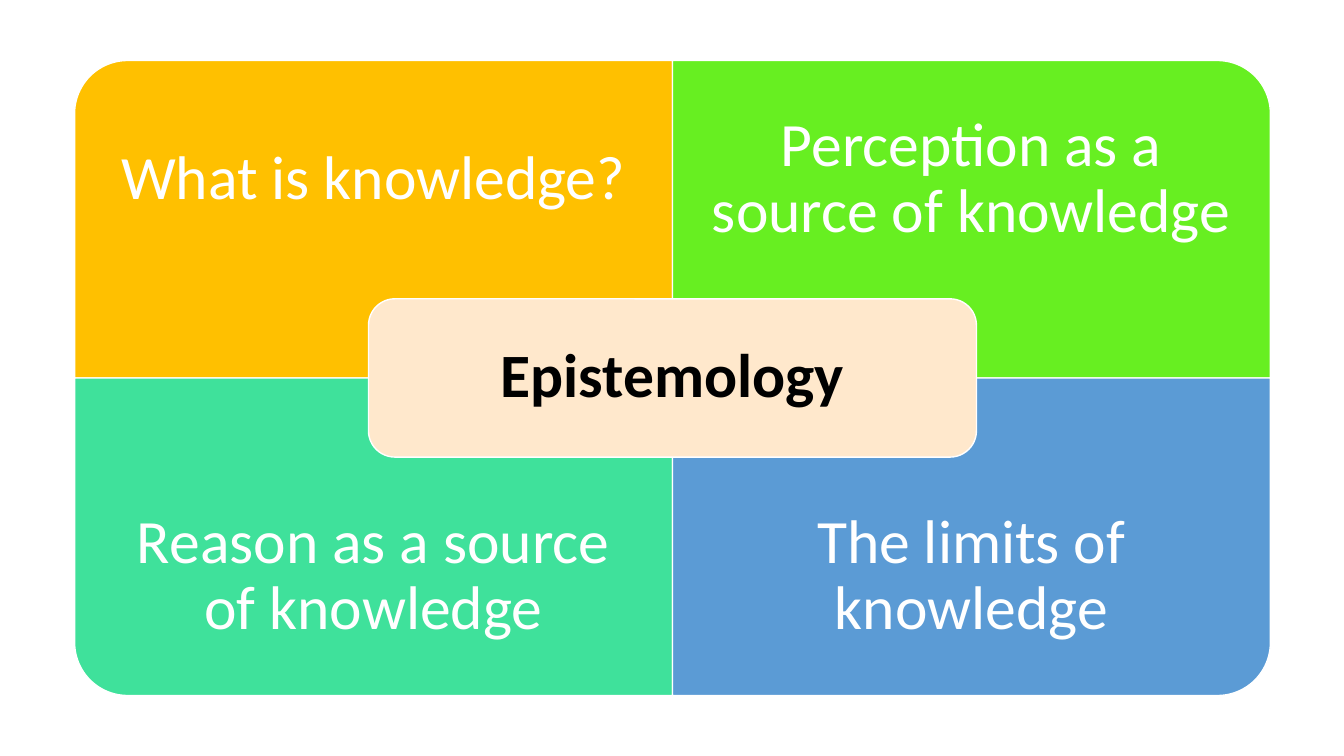
import pptx
import pptx.dml.color
import pptx.enum.shapes
import pptx.enum.text
import pptx.util

Inches, Pt = pptx.util.Inches, pptx.util.Pt
RGB = pptx.dml.color.RGBColor.from_string
SHAPE = pptx.enum.shapes.MSO_SHAPE

THEME = {
    "font": "Calibri",
    "size": Pt(44),
    "space_after": Pt(15.4),
    "line": "FFFFFF",
    "light_text": "FFFFFF",
    "dark_text": "000000",
    "hub": "FFE8CC",
}

LEFT, TOP = 0.74, 0.6
COL_W, ROW_H = 5.93, 3.15
LABEL_H = ROW_H * 0.75
HUB_W, HUB_H = 6.03, 1.57
HUB_PAD = 0.08

# column, row, rotation that turns the rounded corner outwards, fill, label
QUADRANTS = [
    (0, 0, 270, "FFC000", "What is knowledge?"),
    (1, 0, 0, "67EF21", "Perception as a source of knowledge"),
    (0, 1, 180, "3FE19B", "Reason as a source of knowledge"),
    (1, 1, 90, "5B9BD5", "The limits of knowledge"),
]


def add_panel(shapes, kind, cx, cy, w, h, fill):
    """Add a filled, outlined shape centred on (cx, cy), in inches."""
    sp = shapes.add_shape(kind, Inches(cx - w / 2), Inches(cy - h / 2), Inches(w), Inches(h))
    sp.shadow.inherit = False
    sp.fill.solid()
    sp.fill.fore_color.rgb = RGB(fill)
    sp.line.color.rgb = RGB(THEME["line"])
    sp.line.width = Pt(1)
    return sp


def write_label(sp, text, color, inset, bold=False):
    tf = sp.text_frame
    tf.word_wrap = True
    tf.auto_size = pptx.enum.text.MSO_AUTO_SIZE.NONE
    tf.vertical_anchor = pptx.enum.text.MSO_ANCHOR.MIDDLE
    tf.margin_left = tf.margin_right = tf.margin_top = tf.margin_bottom = Inches(inset)
    p = tf.paragraphs[0]
    p.text = text
    p.alignment = pptx.enum.text.PP_ALIGN.CENTER
    p.line_spacing = 0.9
    p.space_after = THEME["space_after"]
    p.font.name = THEME["font"]
    p.font.size = THEME["size"]
    p.font.bold = bold
    p.font.color.rgb = RGB(color)


prs = pptx.Presentation()
prs.slide_width, prs.slide_height = Inches(13.33), Inches(7.5)
s = prs.slides.add_slide(prs.slide_layouts.get_by_name("Title Only"))

for col, row, rotation, fill, text in QUADRANTS:
    x, y = LEFT + col * COL_W, TOP + row * ROW_H
    w, h = (ROW_H, COL_W) if rotation % 180 else (COL_W, ROW_H)
    sp = add_panel(s.shapes, SHAPE.ROUND_1_RECTANGLE, x + COL_W / 2, y + ROW_H / 2, w, h, fill)
    sp.rotation = rotation
    label_y = y + row * (ROW_H - LABEL_H)
    label = s.shapes.add_textbox(Inches(x), Inches(label_y), Inches(COL_W), Inches(LABEL_H))
    write_label(label, text, THEME["light_text"], 0.34)

hub_x, hub_y = LEFT + COL_W, TOP + ROW_H
hub = add_panel(s.shapes, SHAPE.ROUNDED_RECTANGLE, hub_x, hub_y, HUB_W, HUB_H, THEME["hub"])

title = s.shapes.title
title.left, title.top = hub.left + Inches(HUB_PAD), hub.top + Inches(HUB_PAD)
title.width, title.height = hub.width - Inches(2 * HUB_PAD), hub.height - Inches(2 * HUB_PAD)
write_label(title, "Epistemology", THEME["dark_text"], 0.18, bold=True)
hub.element.addnext(title.element)  # bring the title in front of the hub

prs.save("out.pptx")
